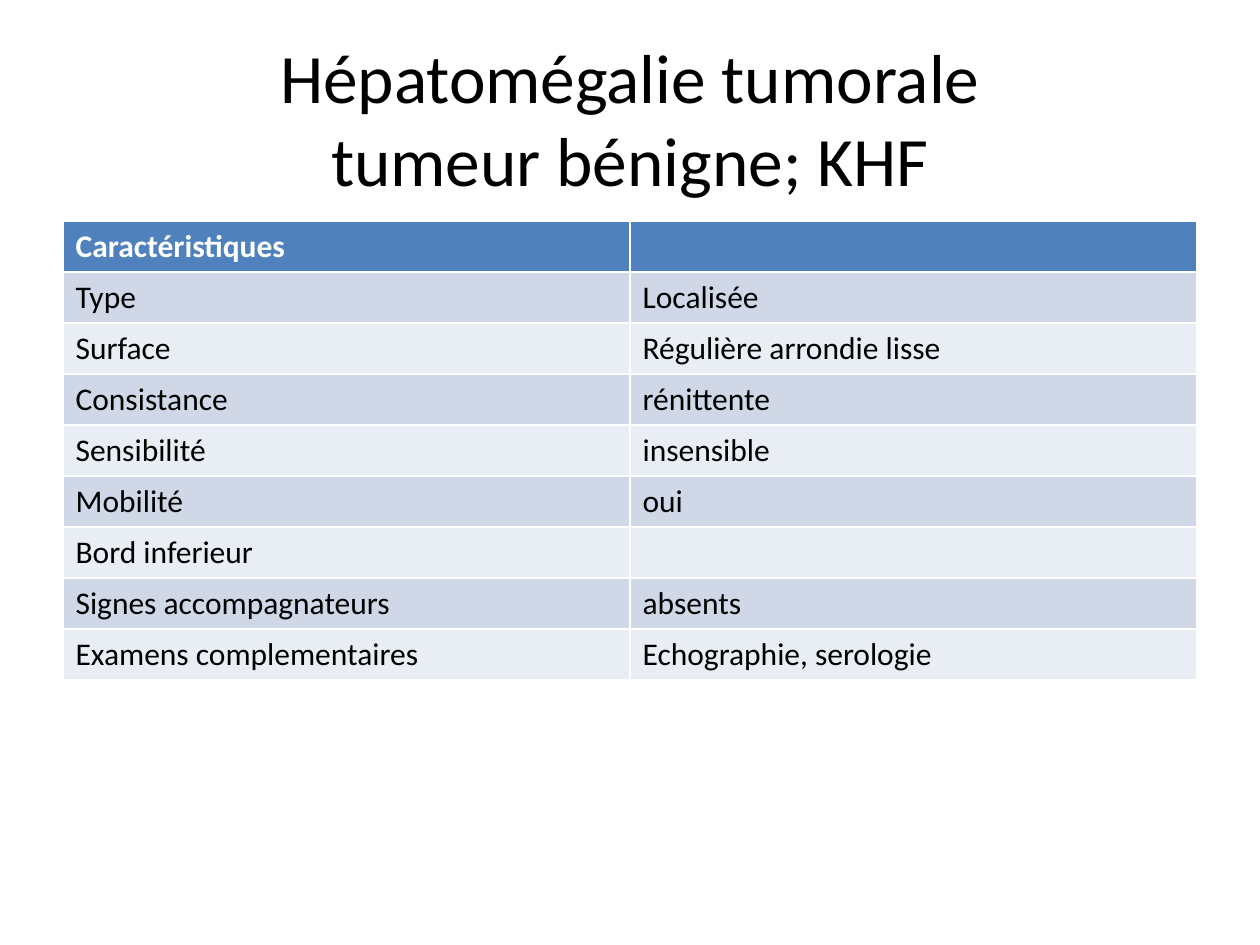
from pptx import Presentation
from pptx import util as u
from pptx.dml import color
from pptx.enum import text


def px(n):
    return u.Emu(round(n * 914400 / 126))


def style(font, form, tint):
    for key, val in form.items():
        setattr(font, key, val)
    font.color.rgb = color.RGBColor.from_string(tint)


deck = Presentation()
deck.slide_width, deck.slide_height = px(1260), px(945)
slide = deck.slides.add_slide(deck.slide_layouts[6])

title = slide.shapes.add_textbox(px(63), px(38), px(1134), px(158))
frame = title.text_frame
for key, val in {"word_wrap": True, "vertical_anchor": text.MSO_ANCHOR.MIDDLE}.items():
    setattr(frame, key, val)
head = frame.paragraphs[0]
head.text = "Hépatomégalie tumorale\vtumeur bénigne; KHF"
head.alignment = text.PP_ALIGN.CENTER
style(head.font, {"name": "Calibri", "size": u.Pt(39.6)}, "000000")

rows = [
    ("Caractéristiques", ""),
    ("Type", "Localisée"),
    ("Surface", "Régulière arrondie lisse"),
    ("Consistance", "rénittente"),
    ("Sensibilité", "insensible"),
    ("Mobilité", "oui"),
    ("Bord inferieur", ""),
    ("Signes accompagnateurs", "absents"),
    ("Examens complementaires", "Echographie, serologie"),
]
bands = ["E9EDF4", "D0D8E8"]
high = 51
table = slide.shapes.add_table(
    len(rows), 2, px(63), px(221), px(1134), px(high * len(rows))
).table
for r, row in enumerate(rows):
    top = r == 0
    table.rows[r].height = px(high)
    for c, word in enumerate(row):
        cell = table.cell(r, c)
        cell.fill.solid()
        cell.fill.fore_color.rgb = color.RGBColor.from_string(
            "4F81BD" if top else bands[r % 2]
        )
        cell.text = word
        form = {"name": "Calibri", "size": u.Pt(18), "bold": top}
        style(cell.text_frame.paragraphs[0].font, form, "FFFFFF" if top else "000000")

deck.save("out.pptx")
